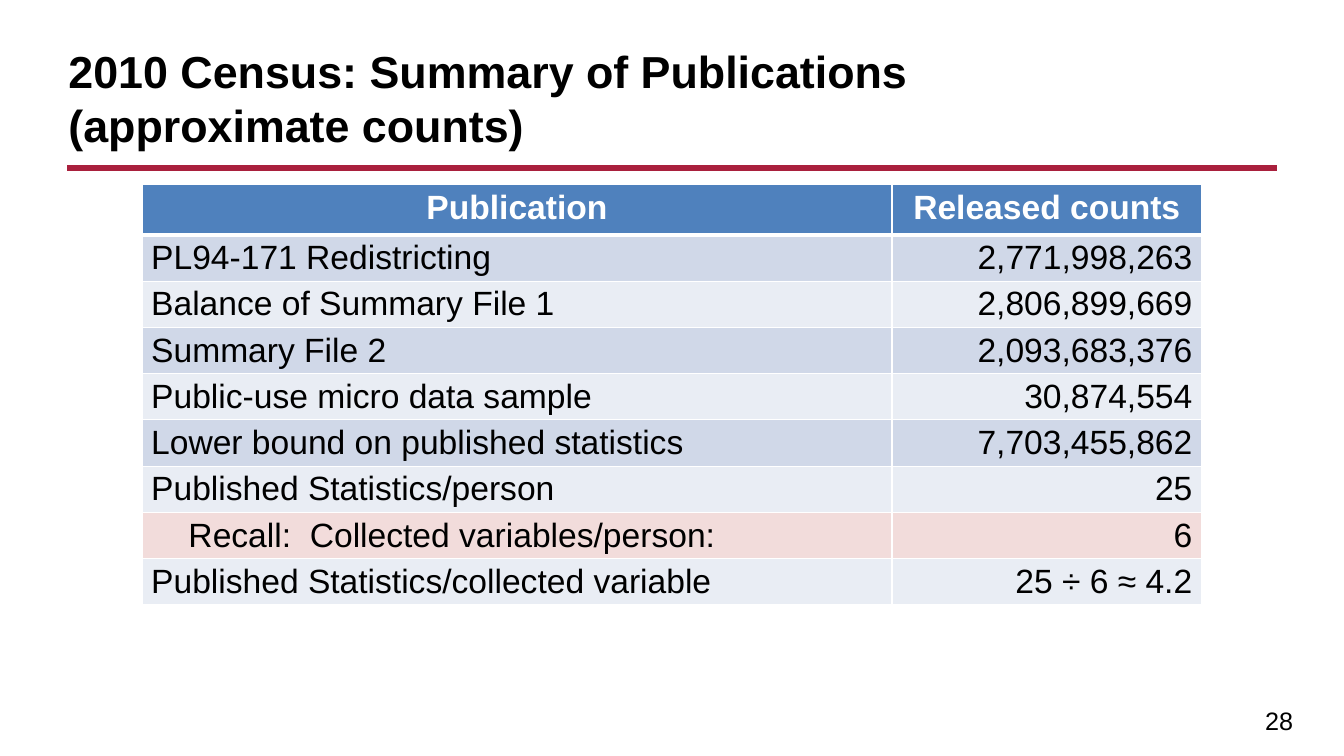
from lxml.etree import SubElement
from pptx import Presentation
from pptx.dml.color import RGBColor
from pptx.enum.shapes import MSO_CONNECTOR
from pptx.enum.text import MSO_ANCHOR, MSO_AUTO_SIZE, PP_ALIGN
from pptx.oxml.ns import qn
from pptx.util import Cm, Pt

FONT = "Arial"
COLORS = {
    "text": "000000",
    "white": "FFFFFF",
    "rule": "A9203D",
    "header": "4F81BD",
    "dark band": "D0D8E8",
    "light band": "E9EDF4",
    "recall": "F2DCDB",
}
HEADINGS = ("Publication", "Released counts")
PUBLICATIONS = [
    ("PL94-171 Redistricting", "2,771,998,263"),
    ("Balance of Summary File 1", "2,806,899,669"),
    ("Summary File 2", "2,093,683,376"),
    ("Public-use micro data sample", "30,874,554"),
    ("Lower bound on published statistics", "7,703,455,862"),
    ("Published Statistics/person", "25"),
    ("Recall:  Collected variables/person:", "6"),
    ("Published Statistics/collected variable", "25 ÷ 6 ≈ 4.2"),
]
RECALL_ROW = 7


def color(name):
    return RGBColor.from_string(COLORS[name])


def format_text(frame, size, align, color_name="text", bold=False):
    for paragraph in frame.paragraphs:
        paragraph.alignment = align
        for run in paragraph.runs:
            run.font.name = FONT
            run.font.size = Pt(size)
            run.font.bold = bold
            run.font.color.rgb = color(color_name)


def set_title(slide, wording):
    title = slide.shapes.title
    title.left, title.top = Cm(1.47), Cm(0.76)
    title.width, title.height = Cm(30.68), Cm(3.18)
    frame = title.text_frame
    frame.text = wording
    frame.word_wrap = True
    frame.auto_size = MSO_AUTO_SIZE.NONE
    frame.vertical_anchor = MSO_ANCHOR.BOTTOM
    format_text(frame, 32, PP_ALIGN.LEFT, bold=True)


def add_rule(slide):
    rule = slide.shapes.add_connector(
        MSO_CONNECTOR.STRAIGHT, Cm(1.7), Cm(4.24), Cm(32.18), Cm(4.24))
    rule.line.color.rgb = color("rule")
    rule.line.width = Pt(4.5)
    SubElement(rule.element.spPr, qn("a:effectLst"))


def set_borders(cell, top=1, bottom=1):
    properties = cell._tc.get_or_add_tcPr()
    for side, width in (("L", 1), ("R", 1), ("T", top), ("B", bottom)):
        border = SubElement(properties, qn(f"a:ln{side}"), w=str(Pt(width)))
        fill = SubElement(border, qn("a:solidFill"))
        SubElement(fill, qn("a:srgbClr"), val=COLORS["white"])


def fill_cell(cell, wording, band, align, color_name="text", bold=False):
    cell.margin_left = cell.margin_right = Cm(0.23)
    cell.margin_top = cell.margin_bottom = Cm(0.11)
    cell.fill.solid()
    cell.fill.fore_color.rgb = color(band)
    cell.text_frame.text = wording
    format_text(cell.text_frame, 24, align, color_name, bold)


def add_publication_table(slide):
    row_count = len(PUBLICATIONS) + 1
    table = slide.shapes.add_table(
        row_count, 2, Cm(3.58), Cm(4.65), Cm(26.7), Cm(10.39)).table
    table.columns[0].width, table.columns[1].width = Cm(18.9), Cm(7.8)
    for number, row in enumerate(table.rows):
        row.height = Cm(1.14) if number else Cm(1.27)

    # Heading row
    for column, heading in enumerate(HEADINGS):
        cell = table.cell(0, column)
        set_borders(cell, bottom=3)
        fill_cell(cell, heading, "header", PP_ALIGN.CENTER, "white", True)

    # Publications in alternating bands, with the recalled figure set apart
    for number, publication in enumerate(PUBLICATIONS, start=1):
        band = "dark band" if number % 2 else "light band"
        if number == RECALL_ROW:
            band = "recall"
        for column, align in enumerate((PP_ALIGN.LEFT, PP_ALIGN.RIGHT)):
            cell = table.cell(number, column)
            set_borders(cell, top=3 if number == 1 else 1)
            fill_cell(cell, publication[column], band, align)

    # Indent of the recalled figure
    recall = table.cell(RECALL_ROW, 0).text_frame.paragraphs[0]
    recall._p.get_or_add_pPr().set("marL", str(Cm(0.94)))


def add_page_number(slide, number):
    page_number = slide.shapes.add_textbox(
        Cm(25.65), Cm(17.65), Cm(7.19), Cm(0.99))
    frame = page_number.text_frame
    frame.text = number
    frame.word_wrap = True
    frame.vertical_anchor = MSO_ANCHOR.MIDDLE
    format_text(frame, 18, PP_ALIGN.RIGHT)


def main():
    presentation = Presentation()
    presentation.slide_width, presentation.slide_height = Cm(33.87), Cm(19.05)
    slide = presentation.slides.add_slide(presentation.slide_layouts[5])
    add_rule(slide)
    set_title(slide, "2010 Census: Summary of Publications")
    title_paragraph = slide.shapes.title.text_frame.paragraphs[0]
    title_paragraph.add_line_break()
    title_paragraph.add_run().text = "(approximate counts)"
    format_text(slide.shapes.title.text_frame, 32, PP_ALIGN.LEFT, bold=True)
    add_publication_table(slide)
    add_page_number(slide, "28")
    presentation.save("out.pptx")


if __name__ == "__main__":
    main()
